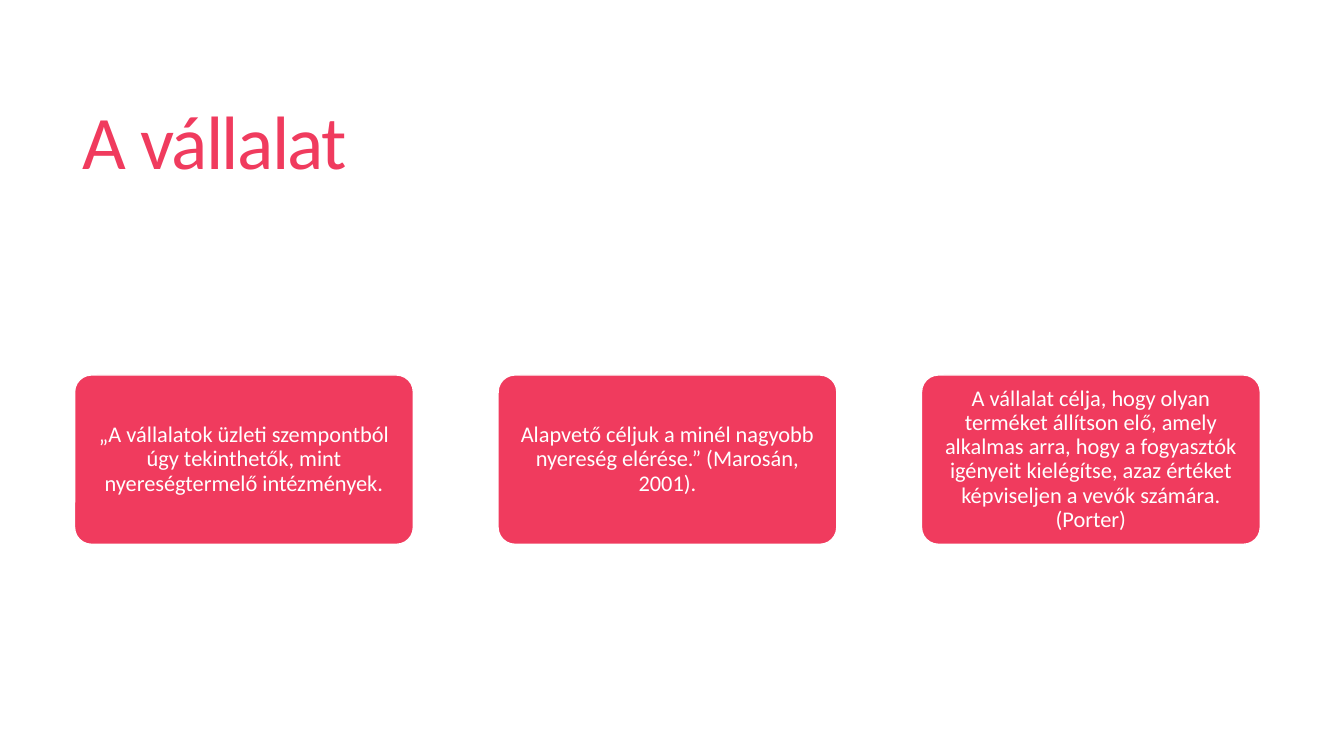
from pptx import Presentation
from pptx.dml.color import RGBColor
from pptx.enum.shapes import MSO_SHAPE as Shape
from pptx.enum.text import MSO_ANCHOR as Anchor, MSO_AUTO_SIZE as AutoSize, PP_ALIGN as Align
from pptx.util import Inches, Pt

# Content
TITLE = "A vállalat"
CARDS = [
    "„A vállalatok üzleti szempontból úgy tekinthetők, mint nyereségtermelő intézmények.",
    "Alapvető céljuk a minél nagyobb nyereség elérése.” (Marosán, 2001).",
    "A vállalat célja, hogy olyan terméket állítson elő, amely alkalmas arra, hogy a "
    "fogyasztók igényeit kielégítse, azaz értéket képviseljen a vevők számára. (Porter)",
]

# Theme and layout
THEME = {
    "accent": RGBColor.from_string("F03B5E"),
    "light": RGBColor.from_string("FFFFFF"),
    "font": "Calibri",
    "title": Pt(54),
    "body": Pt(16),
}
SLIDE_W, SLIDE_H = 13.33, 7.5
TITLE_BOX = (0.72, 0.55, 11.78, 1.81)
CARD_LEFT, CARD_TOP = 0.74, 3.72
CARD_W = 3.36
CARD_H = CARD_W / 2
CARD_STEP = CARD_W * 1.25


def place(sp, left, top, width, height):
    box = {"left": left, "top": top, "width": width, "height": height}
    for name, value in box.items():
        setattr(sp, name, Inches(value))


def write(sp, text, size, color, align, spacing):
    tf = sp.text_frame
    tf.text = text
    p = tf.paragraphs[0]
    r = p.runs[0]
    r.font.color.rgb = color
    formats = [
        (tf, {"word_wrap": True, "auto_size": AutoSize.NONE,
              "vertical_anchor": Anchor.MIDDLE}),
        (p, {"alignment": align, "line_spacing": spacing}),
        (r.font, {"name": THEME["font"], "size": size}),
    ]
    for target, values in formats:
        for name, value in values.items():
            setattr(target, name, value)
    return tf, r


def add_title(slide):
    sp = slide.shapes.title
    place(sp, *TITLE_BOX)
    tf, r = write(sp, TITLE, THEME["title"], THEME["accent"], Align.LEFT, 0.85)
    r.font._element.set("spc", "-120")


def add_card(slide, column, text):
    sp = slide.shapes.add_shape(Shape.ROUNDED_RECTANGLE, 0, 0, 0, 0)
    place(sp, CARD_LEFT + column * CARD_STEP, CARD_TOP, CARD_W, CARD_H)
    sp.adjustments[0] = 0.1
    sp.shadow.inherit = False
    sp.fill.solid()
    sp.fill.fore_color.rgb = THEME["accent"]
    sp.line.color.rgb = THEME["light"]
    sp.line.width = Pt(1)
    tf, r = write(sp, text, THEME["body"], THEME["light"], Align.CENTER, 0.9)
    margins = {"left": 0.03, "top": 0.02, "right": 0.03, "bottom": 0.02}
    for side, value in margins.items():
        setattr(tf, f"margin_{side}", Inches(value))


def main():
    prs = Presentation()
    prs.slide_width, prs.slide_height = Inches(SLIDE_W), Inches(SLIDE_H)
    slide = prs.slides.add_slide(prs.slide_layouts.get_by_name("Title Only"))
    add_title(slide)
    for column, text in enumerate(CARDS):
        add_card(slide, column, text)
    prs.save("out.pptx")


if __name__ == "__main__":
    main()
